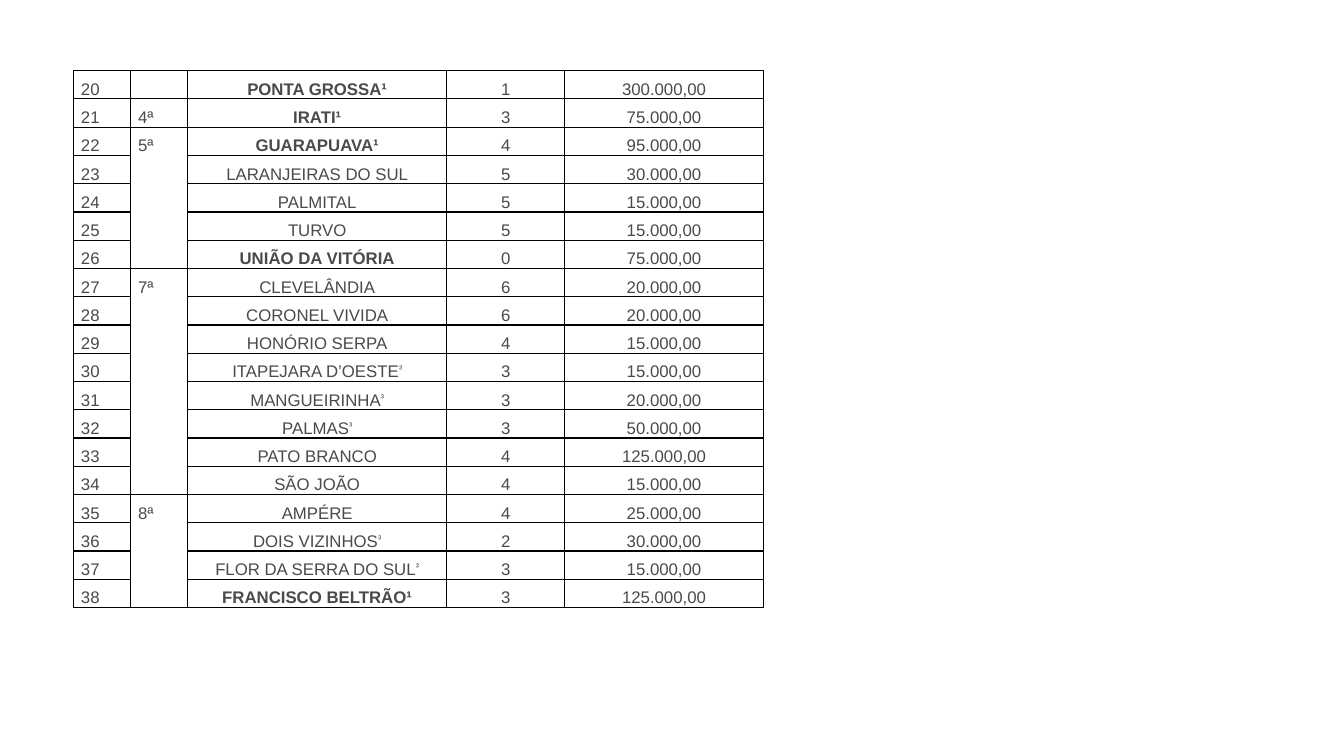
from lxml import etree
from pptx import Presentation
from pptx.dml.color import RGBColor
from pptx.enum.text import PP_ALIGN
from pptx.oxml.ns import qn
from pptx.util import Cm, Pt

CENTER = PP_ALIGN.CENTER
JUSTIFY = PP_ALIGN.JUSTIFY
BLANK_LAYOUT = 6
FIRST_NUMBER = 20
ROW_HEIGHT = Cm(0.71)
COLUMN_WIDTHS = [Cm(1.44), Cm(1.44), Cm(6.53), Cm(2.97), Cm(5.01)]
ALIGNMENTS = [JUSTIFY, JUSTIFY, CENTER, CENTER, CENTER]
TEXT_COLOR = "4A4A4A"
BORDER_COLOR = "000000"

REGIONS = [
    ("", [("PONTA GROSSA¹", "1", "300.000,00")]),
    ("4ª", [("IRATI¹", "3", "75.000,00")]),
    ("5ª", [
        ("GUARAPUAVA¹", "4", "95.000,00"),
        ("LARANJEIRAS DO SUL", "5", "30.000,00"),
        ("PALMITAL", "5", "15.000,00"),
        ("TURVO", "5", "15.000,00"),
        ("UNIÃO DA VITÓRIA", "0", "75.000,00"),
    ]),
    ("7ª", [
        ("CLEVELÂNDIA", "6", "20.000,00"),
        ("CORONEL VIVIDA", "6", "20.000,00"),
        ("HONÓRIO SERPA", "4", "15.000,00"),
        ("ITAPEJARA D’OESTE³", "3", "15.000,00"),
        ("MANGUEIRINHA³", "3", "20.000,00"),
        ("PALMAS³", "3", "50.000,00"),
        ("PATO BRANCO", "4", "125.000,00"),
        ("SÃO JOÃO", "4", "15.000,00"),
    ]),
    ("8ª", [
        ("AMPÉRE", "4", "25.000,00"),
        ("DOIS VIZINHOS³", "2", "30.000,00"),
        ("FLOR DA SERRA DO SUL³", "3", "15.000,00"),
        ("FRANCISCO BELTRÃO¹", "3", "125.000,00"),
    ]),
]
BOLD_NAMES = {"PONTA GROSSA¹", "IRATI¹", "GUARAPUAVA¹", "UNIÃO DA VITÓRIA", "FRANCISCO BELTRÃO¹"}


def color(value):
    return RGBColor.from_string(value)


def add_span(para, text, raised=False):
    span = para.add_run()
    span.text = text
    span.font.name = "Arial"
    span.font.size = Pt(12)
    span.font.bold = text in BOLD_NAMES
    span.font.color.rgb = color(TEXT_COLOR)
    if raised:
        span.font._element.set("baseline", "30000")


def write_cell(cell, text, alignment):
    para = cell.text_frame.paragraphs[0]
    para.alignment = alignment
    para.line_spacing = 1.5
    para.space_after = Pt(10.7)
    name, note, _ = text.partition("³")
    add_span(para, name)
    if note:
        add_span(para, note, raised=True)


def style_cell(cell):
    cell.margin_left = cell.margin_right = Cm(0.19)
    cell.margin_top = cell.margin_bottom = 0
    properties = cell._tc.get_or_add_tcPr()
    for side in ("a:lnL", "a:lnR", "a:lnT", "a:lnB"):
        line = etree.SubElement(properties, qn(side), w=str(Pt(1)))
        fill = etree.SubElement(line, qn("a:solidFill"))
        etree.SubElement(fill, qn("a:srgbClr"), val=BORDER_COLOR)
    cell.fill.background()


def add_grid(page, row_count):
    frame = page.shapes.add_table(
        row_count, len(COLUMN_WIDTHS), Cm(1.85), Cm(1.78),
        sum(COLUMN_WIDTHS), ROW_HEIGHT * row_count)
    table = frame.table
    table.first_row = False
    table.horz_banding = False
    for column, width in zip(table.columns, COLUMN_WIDTHS):
        column.width = width
    for row in table.rows:
        row.height = ROW_HEIGHT
    for cell in table.iter_cells():
        style_cell(cell)
    return table


def fill_regions(table):
    row = 0
    for region, towns in REGIONS:
        if len(towns) > 1:
            table.cell(row, 1).merge(table.cell(row + len(towns) - 1, 1))
        write_cell(table.cell(row, 1), region, ALIGNMENTS[1])
        for town, count, amount in towns:
            texts = {0: str(FIRST_NUMBER + row), 2: town, 3: count, 4: amount}
            for column, text in texts.items():
                write_cell(table.cell(row, column), text, ALIGNMENTS[column])
            row += 1


def main():
    deck = Presentation()
    deck.slide_width = Cm(33.87)
    deck.slide_height = Cm(19.05)
    page = deck.slides.add_slide(deck.slide_layouts[BLANK_LAYOUT])
    table = add_grid(page, sum(len(towns) for _, towns in REGIONS))
    fill_regions(table)
    deck.save("out.pptx")


if __name__ == "__main__":
    main()
